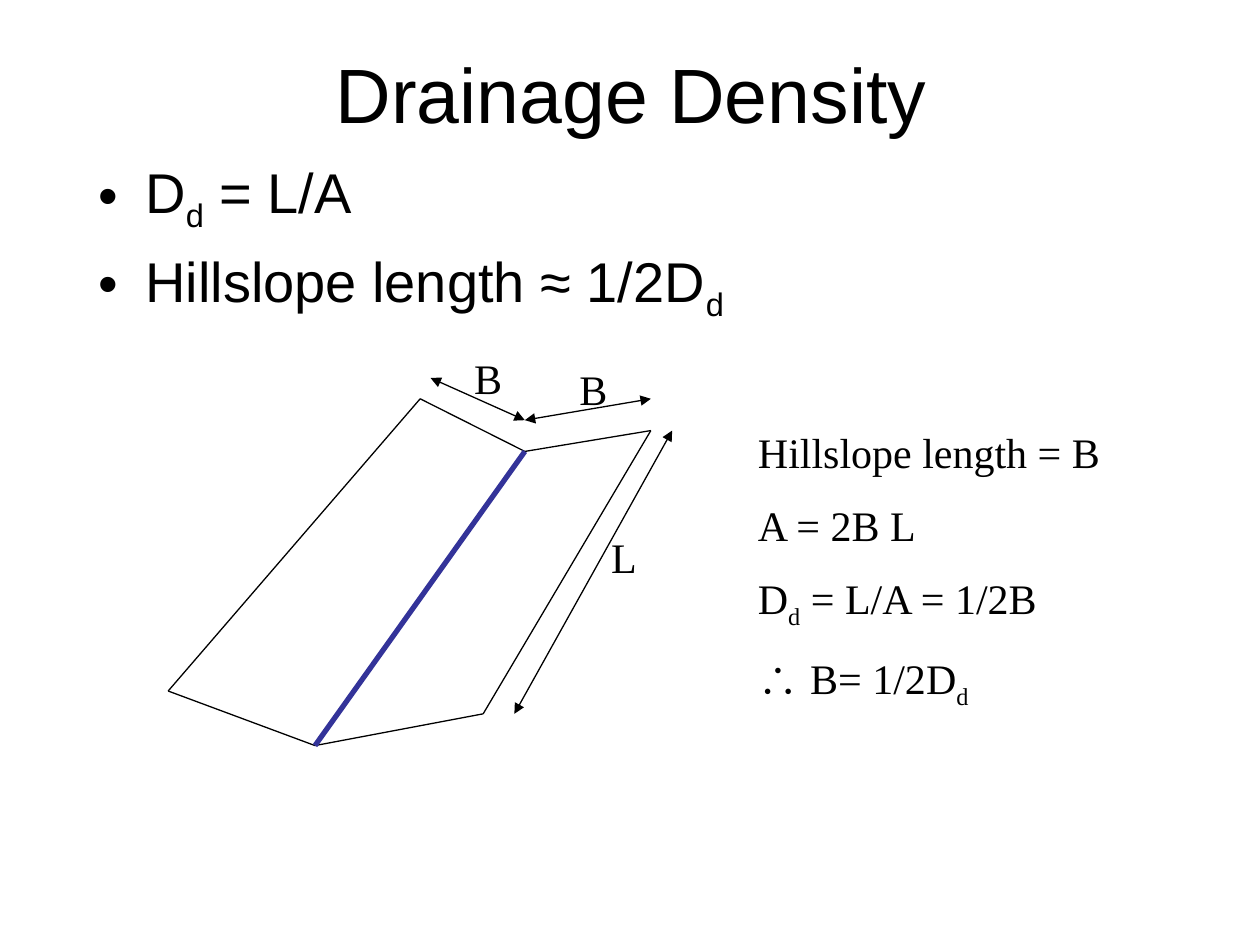
from lxml.etree import SubElement
from pptx import Presentation
from pptx.dml.color import RGBColor
from pptx.enum.shapes import MSO_CONNECTOR
from pptx.enum.text import MSO_ANCHOR, PP_ALIGN
from pptx.oxml.ns import qn
from pptx.util import Cm, Pt

BLACK, BLUE = "000000", "333399"
TITLE = {"name": "Arial", "size": Pt(44)}
BODY = {"name": "Arial", "size": Pt(32)}
NOTE = {"name": "Times New Roman", "size": Pt(24)}


def color(hex_string):
    return RGBColor.from_string(hex_string)


class SlideBuilder:
    """Holds the text color, the bullet indent and the current slide."""

    def __init__(self, slide, text_color=BLACK, indent=0.95):
        self.slide = slide
        self.text_color = text_color
        self.indent = Cm(indent)

    def text(self, left, top, width, height, lines, font_format,
             space=0, bullet=False, frame_format=None, align=PP_ALIGN.LEFT):
        """Each line alternates normal and subscript pieces, split by '_'."""
        shape = self.slide.shapes.add_textbox(Cm(left), Cm(top), Cm(width), Cm(height))
        frame = shape.text_frame
        for name, value in {"word_wrap": True, **(frame_format or {})}.items():
            setattr(frame, name, value)
        for index, line in enumerate(lines):
            paragraph = frame.paragraphs[0] if index == 0 else frame.add_paragraph()
            paragraph.alignment = align
            if index:
                paragraph.space_before = Pt(space)
            if bullet:
                self.add_bullet(paragraph)
            for position, piece in enumerate(line.split("_")):
                run = paragraph.add_run()
                run.text = piece
                for name, value in font_format.items():
                    setattr(run.font, name, value)
                run.font.color.rgb = color(self.text_color)
                if position % 2:
                    run.font._element.set("baseline", "-25000")

    def add_bullet(self, paragraph):
        properties = paragraph._p.get_or_add_pPr()
        properties.set("marL", str(self.indent))
        properties.set("indent", str(-self.indent))
        SubElement(properties, qn("a:buFont"), typeface="Arial")
        SubElement(properties, qn("a:buChar"), char="•")

    def line(self, start, end, line_color=BLACK, width=0.75, arrows=False):
        ends = [Cm(value) for value in (*start, *end)]
        connector = self.slide.shapes.add_connector(MSO_CONNECTOR.STRAIGHT, *ends)
        connector.line.color.rgb = color(line_color)
        connector.line.width = Pt(width)
        if arrows:
            outline = connector.line._get_or_add_ln()
            for tag in ("a:headEnd", "a:tailEnd"):
                SubElement(outline, qn(tag), type="triangle")
        SubElement(connector._element.spPr, qn("a:effectLst"))


def main():
    presentation = Presentation()
    presentation.slide_width, presentation.slide_height = Cm(25.4), Cm(19.05)
    builder = SlideBuilder(presentation.slides.add_slide(presentation.slide_layouts[6]))

    # Title and bullets
    builder.text(1.93, 0.58, 21.59, 2.57, ["Drainage Density"], TITLE,
                 frame_format={"vertical_anchor": MSO_ANCHOR.MIDDLE}, align=PP_ALIGN.CENTER)
    builder.text(1.73, 3.05, 21.59, 3.35, ["D_d_ = L/A", "Hillslope length ≈ 1/2D_d"],
                 BODY, space=7, bullet=True)

    # Two hillslopes that meet at the channel
    left_bottom, left_top = (3.39, 13.93), (8.47, 8.04)
    channel_bottom, channel_top = (6.35, 15.03), (10.58, 9.1)
    right_bottom, right_top = (9.74, 14.39), (13.12, 8.68)
    outline = [left_top, left_bottom, channel_bottom, right_bottom,
               right_top, channel_top, left_top]
    for start, end in zip(outline, outline[1:]):
        builder.line(start, end)
    builder.line(channel_bottom, channel_top, BLUE, 3)

    # Dimension arrows
    for start, end in [((8.68, 7.62), (10.58, 8.47)),
                       ((10.58, 8.47), (13.12, 8.04)),
                       ((10.37, 14.39), (13.55, 8.68))]:
        builder.line(start, end, arrows=True)

    # Dimension labels
    for label, left, top in [("L", 12.07, 10.58), ("B", 11.43, 7.2), ("B", 9.31, 6.99)]:
        builder.text(left, top, 1.27, 1.27, [label], NOTE)

    # Derivation
    builder.text(15.03, 8.47, 8.89, 5.84,
                 ["Hillslope length = B", "A = 2B L", "D_d_ = L/A = 1/2B", "∴ B= 1/2D_d"],
                 NOTE, space=13)

    presentation.save("out.pptx")


if __name__ == "__main__":
    main()
